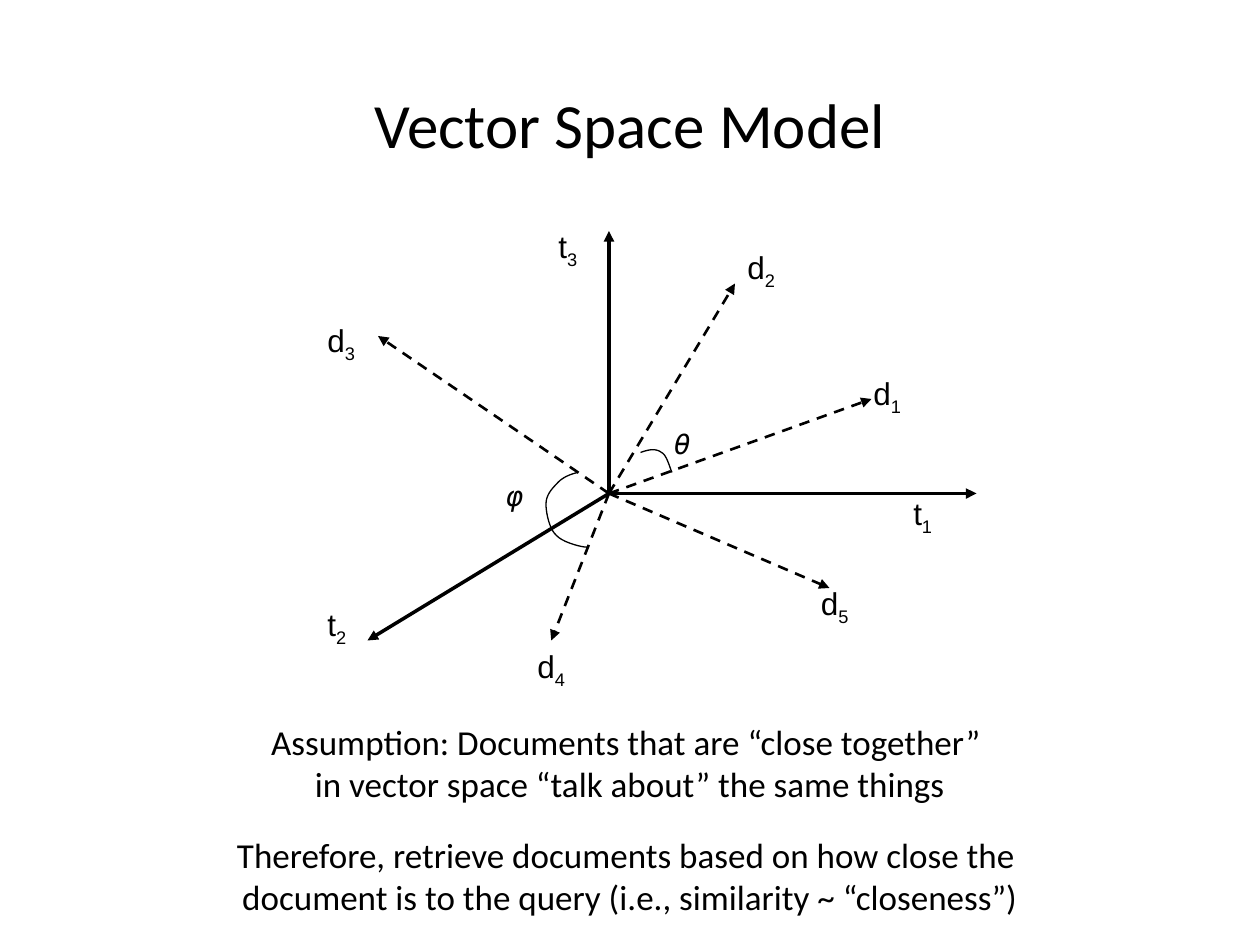
"""Build the Vector Space Model slide."""
from dataclasses import dataclass

import pptx
import pptx.dml.color
import pptx.enum.dml
import pptx.enum.shapes
import pptx.enum.text
import pptx.oxml
import pptx.oxml.ns
import pptx.util

BLACK = pptx.dml.color.RGBColor(0, 0, 0)
COLUMNS, ROWS = 120, 90
CELL = pptx.util.Inches(10) // COLUMNS
ORIGIN = (58, 47)
Point = tuple[float, float]


@dataclass(frozen=True)
class Vector:
    """An arrow from the origin with a label such as t1, placed by its top left."""

    name: str
    tip: Point
    label: Point

    @property
    def is_axis(self) -> bool:
        """Tell a term axis from a document vector."""
        return self.name.startswith("t")


@dataclass(frozen=True)
class Angle:
    """An arc of joined cubic curves with its Greek letter."""

    letter: str
    label: Point
    curve: tuple[Point, ...]


@dataclass(frozen=True)
class Statement:
    """A centred text that spans the slide."""

    text: str
    top: float
    height: float
    size: int


VECTORS = (
    Vector("t1", (93, 47), (85.8, 46.5)),
    Vector("t3", (58, 22), (52, 21)),
    Vector("t2", (35, 61), (30, 57)),
    Vector("d1", (83, 38), (82, 35)),
    Vector("d5", (79, 56), (77, 55)),
    Vector("d2", (70, 27), (70, 23)),
    Vector("d4", (52.5, 61), (50, 61)),
    Vector("d3", (36, 32), (30, 30)),
)
ANGLES = (
    Angle("θ", (63, 40), (
        (61, 43.1), (61.8, 42.8), (62.5, 42.7), (63, 43.1),
        (63.5, 43.3), (63.8, 44.6), (64, 45))),
    Angle("φ", (47, 45), (
        (55, 45), (54.2, 45.2), (53.5, 45.5), (53, 46.1),
        (52.5, 46.6), (52, 47.2), (52, 48),
        (52, 48.8), (52.3, 50.4), (53, 51),
        (53.6, 51.7), (55.7, 52.2), (56, 52.1))),
)
STATEMENTS = (
    Statement("Vector Space Model", 7.2, 9, 36),
    Statement("Assumption: Documents that are “close together” \n"
              "in vector space “talk about” the same things", 68, 9.2, 20),
    Statement("Therefore, retrieve documents based on how close the \n"
              "document is to the query (i.e., similarity ~ “closeness”)", 78.8, 9.2, 20),
)


def cells(count: float) -> pptx.util.Emu:
    """Convert grid cells to a length."""
    return pptx.util.Emu(round(count * CELL))


def add_text(slide, text: str, left: float, top: float, width: float, height: float, *,
             font: str, size: int, subscript: str = "", italic: bool = False,
             centred: bool = False, wrap: bool = True) -> None:
    """Add a text box, with an optional subscript after the text."""
    shape = slide.shapes.add_textbox(*map(cells, (left, top, width, height)))
    frame = shape.text_frame
    frame.word_wrap = wrap
    if centred:
        frame.vertical_anchor = pptx.enum.text.MSO_ANCHOR.MIDDLE
    paragraph = frame.paragraphs[0]
    paragraph.text = text.replace("\n", "\v")
    if centred:
        paragraph.alignment = pptx.enum.text.PP_ALIGN.CENTER
    if subscript:
        run = paragraph.add_run()
        run.text = subscript
        run._r.get_or_add_rPr().set("baseline", "-25000")
    for run in paragraph.runs:
        run.font.name = font
        run.font.size = pptx.util.Pt(size)
        run.font.italic = italic
        run.font.color.rgb = BLACK


def add_vector(slide, vector: Vector) -> None:
    """Draw an arrow, solid for an axis and dashed for a document."""
    connector = slide.shapes.add_connector(
        pptx.enum.shapes.MSO_CONNECTOR.STRAIGHT, *map(cells, ORIGIN + vector.tip))
    connector.line.color.rgb = BLACK
    connector.line.width = pptx.util.Pt(2 if vector.is_axis else 1.5)
    if not vector.is_axis:
        connector.line.dash_style = pptx.enum.dml.MSO_LINE.DASH
    namespace = pptx.oxml.ns.nsdecls("a")
    properties = connector._element.spPr
    properties.find(pptx.oxml.ns.qn("a:ln")).append(
        pptx.oxml.parse_xml(f'<a:tailEnd {namespace} type="triangle"/>'))
    properties.append(pptx.oxml.parse_xml(f"<a:effectLst {namespace}/>"))


def add_vector_label(slide, vector: Vector) -> None:
    """Write the name of a vector with its number as a subscript."""
    add_text(slide, vector.name[0], *vector.label, 4.3 if vector.is_axis else 5.2, 4.8,
             subscript=vector.name[1], font="Arial", size=18, wrap=False)


def bezier(points: tuple[Point, ...], share: float) -> Point:
    """Return the point at a share of a cubic curve."""
    rest = 1 - share
    weights = (rest ** 3, 3 * rest ** 2 * share, 3 * rest * share ** 2, share ** 3)
    x, y = (sum(w * v for w, v in zip(weights, axis)) for axis in zip(*points))
    return x, y


def add_angle(slide, angle: Angle, steps: int = 10) -> None:
    """Draw an arc and its letter."""
    points = [bezier(angle.curve[first:first + 4], step / steps)
              for first in range(0, len(angle.curve) - 1, 3)
              for step in range(1, steps + 1)]
    builder = slide.shapes.build_freeform(*map(cells, angle.curve[0]))
    builder.add_line_segments([(cells(x), cells(y)) for x, y in points], close=False)
    shape = builder.convert_to_shape()
    shape.shadow.inherit = False
    shape.fill.background()
    shape.line.color.rgb = BLACK
    shape.line.width = pptx.util.Pt(0.75)
    add_text(slide, angle.letter, *angle.label, 3.6, 4.4,
             font="DejaVu Sans Mono", size=16, italic=True)


def main() -> None:
    """Build and save the slide."""
    presentation = pptx.Presentation()
    presentation.slide_width = cells(COLUMNS)
    presentation.slide_height = cells(ROWS)
    slide = presentation.slides.add_slide(presentation.slide_layouts[6])
    for vector in VECTORS:
        add_vector(slide, vector)
    for vector in VECTORS:
        add_vector_label(slide, vector)
    for angle in ANGLES:
        add_angle(slide, angle)
    for statement in STATEMENTS:
        add_text(slide, statement.text, 0, statement.top, COLUMNS, statement.height,
                 font="Calibri", size=statement.size, centred=True)
    presentation.save("out.pptx")


if __name__ == "__main__":
    main()
